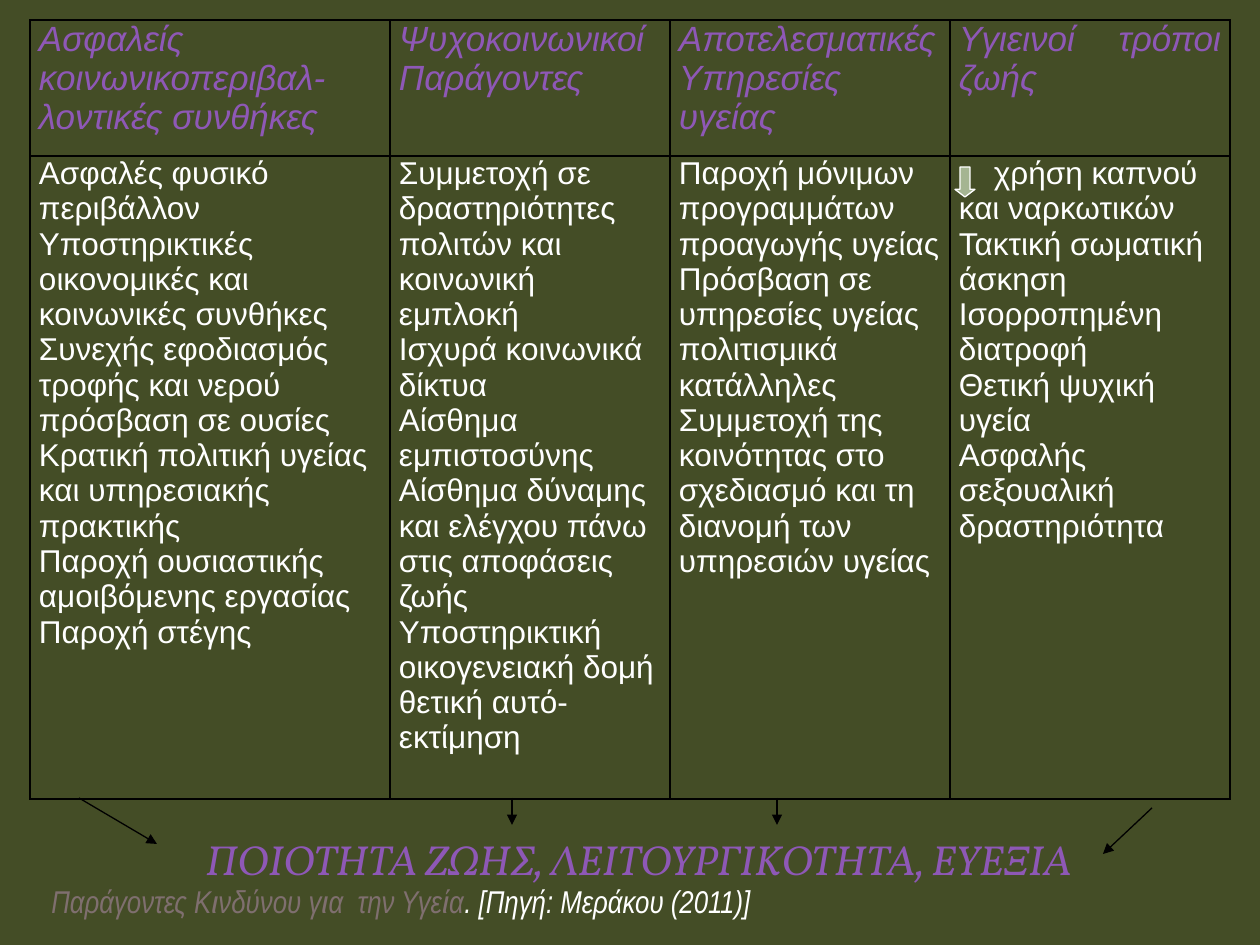
import pptx
import pptx.util
import pptx.dml.color
import pptx.enum.dml
import pptx.enum.shapes
import pptx.enum.text
import pptx.oxml.ns
from lxml import etree

PX = 914400 // 126
BLACK, WHITE, PURPLE, GREY, SAGE, OLIVE = "000000", "FFFFFF", "8E58B6", "7F6F6F", "A5B592", "444D26"
ALIGN = pptx.enum.text.PP_ALIGN

COLUMNS = [
    (360, ["Ασφαλείς κοινωνικοπεριβαλ-", "λοντικές συνθήκες"],
     ["Ασφαλές φυσικό περιβάλλον",
      "Υποστηρικτικές οικονομικές και κοινωνικές συνθήκες",
      "Συνεχής εφοδιασμός τροφής και νερού",
      "πρόσβαση σε ουσίες",
      "Κρατική πολιτική υγείας και υπηρεσιακής πρακτικής",
      "Παροχή ουσιαστικής αμοιβόμενης εργασίας",
      "Παροχή στέγης"]),
    (280, ["Ψυχοκοινωνικοί", "Παράγοντες"],
     ["Συμμετοχή σε δραστηριότητες πολιτών και κοινωνική εμπλοκή",
      "Ισχυρά κοινωνικά δίκτυα",
      "Αίσθημα εμπιστοσύνης",
      "Αίσθημα δύναμης και ελέγχου πάνω στις αποφάσεις ζωής",
      "Υποστηρικτική οικογενειακή δομή",
      "θετική αυτό-εκτίμηση"]),
    (280, ["Αποτελεσματικές", "Υπηρεσίες υγείας"],
     ["Παροχή μόνιμων προγραμμάτων προαγωγής υγείας",
      "Πρόσβαση σε υπηρεσίες υγείας πολιτισμικά κατάλληλες",
      "Συμμετοχή της κοινότητας στο σχεδιασμό και τη διανομή των υπηρεσιών υγείας"]),
    (280, ["Υγιεινοί τρόποι ζωής"],
     ["χρήση καπνού και ναρκωτικών",
      "Τακτική σωματική άσκηση",
      "Ισορροπημένη διατροφή",
      "Θετική ψυχική υγεία",
      "Ασφαλής σεξουαλική δραστηριότητα"]),
]
ROW_HEIGHTS = [136, 643]
ARROWS = [(79, 798, 157, 844), (512, 798, 512, 825), (777, 798, 777, 825), (1152, 808, 1103, 854)]
TEXTS = [
    ((118, 827, 1042, 63), "Vollkorn", 24, ALIGN.CENTER,
     [("ΠΟΙΟΤΗΤΑ ΖΩΗΣ, ΛΕΙΤΟΥΡΓΙΚΟΤΗΤΑ, ΕΥΕΞΙΑ", PURPLE)]),
    ((39, 876, 1063, 50), "Arial Narrow", 18, ALIGN.JUSTIFY,
     [("Παράγοντες Κινδύνου για  την Υγεία", GREY), (". [Πηγή: Μεράκου (2011)]", WHITE)]),
]


def px(*values):
    return [round(value * PX) for value in values]


def rgb(color):
    return pptx.dml.color.RGBColor.from_string(color)


def child(parent, tag, **attributes):
    return etree.SubElement(parent, pptx.oxml.ns.qn(tag), **attributes)


def set_font(font, name, size, italic):
    font.name, font.size, font.italic = name, pptx.util.Pt(size), italic


def add_borders(cell):
    properties = cell._tc.get_or_add_tcPr()
    for position, side in enumerate(("a:lnL", "a:lnR", "a:lnT", "a:lnB")):
        border = etree.Element(pptx.oxml.ns.qn(side), w="12700")
        child(child(border, "a:solidFill"), "a:srgbClr", val=BLACK)
        properties.insert(position, border)


def fill_cell(cell, lines, size, color, italic, alignment):
    cell.margin_left = cell.margin_right = px(9)[0]
    cell.margin_top = cell.margin_bottom = 0
    cell.fill.background()
    add_borders(cell)
    cell.text = "\n".join(lines)
    for paragraph in cell.text_frame.paragraphs:
        paragraph.alignment = alignment
        set_font(paragraph.font, "Arial", size, italic)
        paragraph.font.color.rgb = rgb(color)


def add_factor_table(slide):
    widths = [width for width, _, _ in COLUMNS]
    frame = slide.shapes.add_table(2, len(COLUMNS), *px(30, 20, sum(widths), sum(ROW_HEIGHTS)))
    table = frame.table
    table.first_row = table.horz_banding = False
    for row, height in zip(table.rows, px(*ROW_HEIGHTS)):
        row.height = height
    for index, (width, heading, factors) in enumerate(COLUMNS):
        table.columns[index].width = px(width)[0]
        fill_cell(table.cell(0, index), heading, 20, PURPLE, True, ALIGN.JUSTIFY)
        fill_cell(table.cell(1, index), factors, 18, WHITE, False, ALIGN.LEFT)
    smoking = table.cell(1, 3).text_frame.paragraphs[0]
    smoking._p.get_or_add_pPr().set("indent", str(px(35)[0]))


def add_arrow(slide, ends):
    arrow = slide.shapes.add_connector(pptx.enum.shapes.MSO_CONNECTOR.STRAIGHT, *px(*ends))
    arrow.line.color.rgb = rgb(BLACK)
    arrow.line.width = pptx.util.Pt(0.75)
    child(arrow.line._get_or_add_ln(), "a:tailEnd", type="triangle")
    child(arrow._element.spPr, "a:effectLst")


def add_text(slide, box, font, size, alignment, runs):
    frame = slide.shapes.add_textbox(*px(*box)).text_frame
    frame.word_wrap = True
    frame.auto_size = pptx.enum.text.MSO_AUTO_SIZE.SHAPE_TO_FIT_TEXT
    frame.vertical_anchor = pptx.enum.text.MSO_ANCHOR.MIDDLE
    paragraph = frame.paragraphs[0]
    paragraph.alignment = alignment
    set_font(paragraph.font, font, size, True)
    for text, color in runs:
        run = paragraph.add_run()
        run.text = text
        run.font.color.rgb = rgb(color)


def add_decrease_arrow(slide):
    shape = slide.shapes.add_shape(pptx.enum.shapes.MSO_SHAPE.DOWN_ARROW, *px(955, 167, 20, 30))
    shape.adjustments[0], shape.adjustments[1] = 0.5, 0.38
    shape.shadow.inherit = False
    shape.fill.solid()
    shape.fill.fore_color.rgb = rgb(SAGE)
    shape.line.color.rgb = rgb(WHITE)
    shape.line.width = pptx.util.Pt(0.75)


def main():
    """Build the slide of health factors leading to quality of life."""
    presentation = pptx.Presentation()
    presentation.slide_width, presentation.slide_height = px(1260, 945)
    slide = presentation.slides.add_slide(presentation.slide_layouts[6])
    slide.background.fill.solid()
    slide.background.fill.fore_color.rgb = rgb(OLIVE)
    add_factor_table(slide)
    for ends in ARROWS:
        add_arrow(slide, ends)
    for text in TEXTS:
        add_text(slide, *text)
    add_decrease_arrow(slide)
    presentation.save("out.pptx")


if __name__ == "__main__":
    main()
